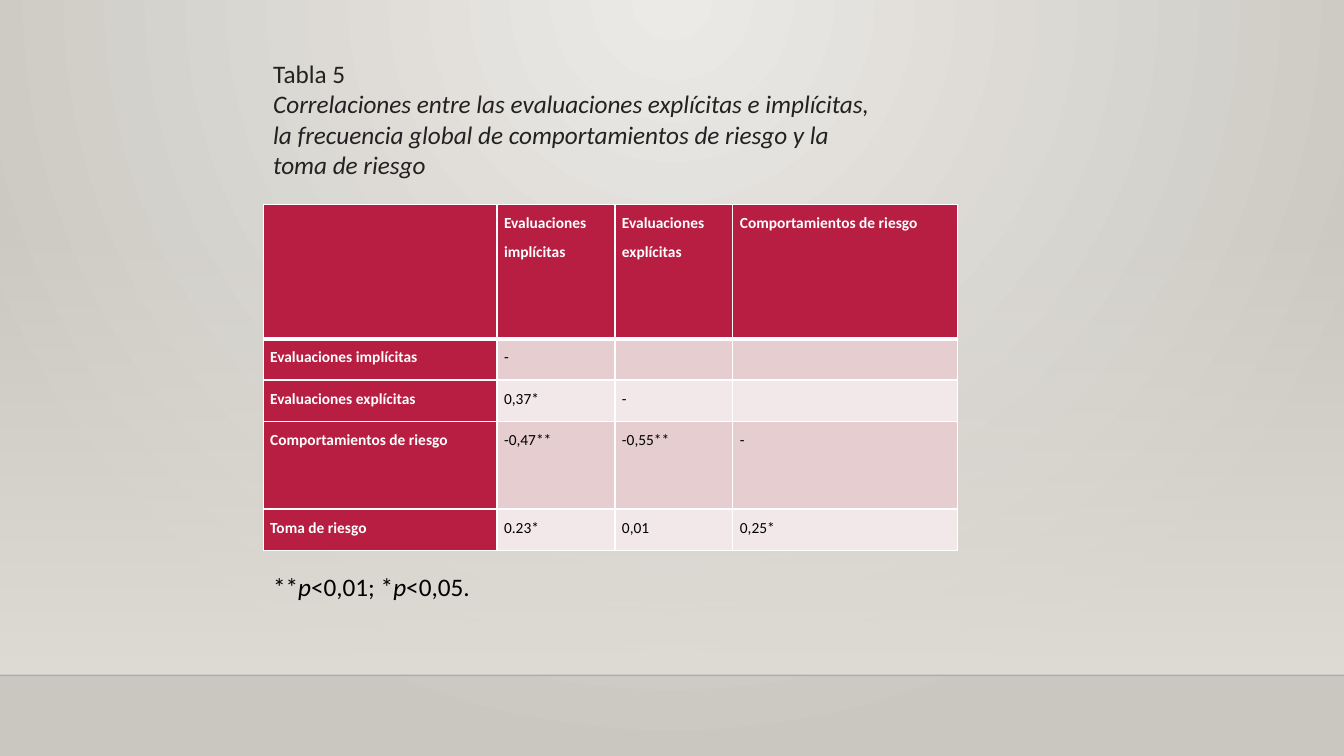
from pptx import Presentation
from pptx.dml.color import RGBColor
from pptx.enum.shapes import MSO_CONNECTOR as Conn, MSO_SHAPE as Shape
from pptx.enum.text import MSO_ANCHOR as Anchor, MSO_AUTO_SIZE as Fit, PP_ALIGN as Align
from pptx.oxml import parse_xml
from pptx.oxml.ns import nsdecls, qn
from pptx.util import Inches, Pt

WIDE, HIGH = 13.33, 7.5
LEFT = 2.61
FONT = "Calibri"
RED, WHITE, BLACK, GREY = "B71E42", "FFFFFF", "000000", "222222"
BANDS = ["E6CDCF", "F3E8E9"]
COLS = [2.32, 1.17, 1.17, 2.23]
ROWS = [1.33, 0.41, 0.41, 0.87, 0.41]
DATA = [
    ["", "Evaluaciones implícitas", "Evaluaciones explícitas", "Comportamientos de riesgo"],
    ["Evaluaciones implícitas", "-", "", ""],
    ["Evaluaciones explícitas", "0,37*", "-", ""],
    ["Comportamientos de riesgo", "-0,47**", "-0,55**", "-"],
    ["Toma de riesgo", "0.23*", "0,01", "0,25*"],
]


def rgb(code):
    return RGBColor.from_string(code)


def inches(box):
    return [Inches(v) for v in box]


def add_run(para, text, size, color, bold=False, italic=False):
    run = para.add_run()
    run.text = text
    font = run.font
    font.name, font.size = FONT, Pt(size)
    font.bold, font.italic = bold, italic
    font.color.rgb = rgb(color)


def blend(fill, first, last):
    fill.gradient()
    for stop, code in zip(fill.gradient_stops, (first, last)):
        stop.color.rgb = rgb(code)
        stop.position = 0 if code == first and stop.position == 0 else 1


def fade(color, percent):
    color.append(parse_xml(f'<a:alpha {nsdecls("a")} val="{percent * 1000}"/>'))


# Backdrop: round glow, soft wall and floor line
def add_stage(slide, box):
    left, top, width, height = box
    blend(slide.background.fill, "ECEAE7", "CAC7C1")
    glow = next(slide.element.iter(qn("a:gradFill")))
    for line in glow.findall(qn("a:lin")):
        glow.remove(line)
    glow.append(parse_xml(
        f'<a:path {nsdecls("a")} path="circle">'
        '<a:fillToRect l="43000" t="0" r="43000" b="100000"/></a:path>'))

    floor = top + height
    wall = slide.shapes.add_shape(Shape.RECTANGLE, *inches(box))
    wall.shadow.inherit = False
    wall.line.fill.background()
    blend(wall.fill, "DFDBD5", "DFDBD5")
    wall.fill.gradient_angle = 270
    fade(next(wall.element.iter(qn("a:srgbClr"))), 0)

    edge = slide.shapes.add_connector(
        Conn.STRAIGHT, *inches([left, floor, left + width, floor]))
    edge.line.width = Pt(1)
    edge.line.color.rgb = rgb("000001")
    fade(next(edge.element.iter(qn("a:srgbClr"))), 20)
    edge.element.spPr.append(parse_xml(f'<a:effectLst {nsdecls("a")}/>'))


# Table number and caption
def add_title(slide, box):
    title = slide.shapes.title
    title.left, title.top, title.width, title.height = inches(box)
    frame = title.text_frame
    frame.word_wrap, frame.auto_size = True, Fit.NONE
    frame.vertical_anchor = Anchor.TOP
    head, body = frame.paragraphs[0], frame.add_paragraph()
    head.alignment = body.alignment = Align.LEFT
    add_run(head, "Tabla 5", 18, GREY)
    add_run(body, "Correlaciones entre las evaluaciones explícitas e implícitas, "
            "la frecuencia global de comportamientos de riesgo y la toma de riesgo",
            18, GREY, italic=True)


def set_edges(cell, row):
    props = cell._tc.get_or_add_tcPr()
    thick = {("B", 0): 3, ("T", 1): 3}
    for side in "LRTB":
        width = Pt(thick.get((side, row), 1))
        props.append(parse_xml(
            f'<a:ln{side} {nsdecls("a")} w="{width}"><a:solidFill>'
            f'<a:srgbClr val="{WHITE}"/></a:solidFill></a:ln{side}>'))


# Correlation table
def add_grid(slide, box):
    grid = slide.shapes.add_table(len(ROWS), len(COLS), *inches(box)).table
    for col, width in zip(grid.columns, COLS):
        col.width = Inches(width)
    for r, height in enumerate(ROWS):
        grid.rows[r].height = Inches(height)
        for c, text in enumerate(DATA[r]):
            cell = grid.cell(r, c)
            label = r == 0 or c == 0
            set_edges(cell, r)
            cell.fill.solid()
            cell.fill.fore_color.rgb = rgb(RED if label else BANDS[(r - 1) % 2])
            cell.margin_left = cell.margin_right = Inches(0.07)
            cell.margin_top = cell.margin_bottom = 0
            if text:
                para = cell.text_frame.paragraphs[0]
                para.line_spacing = 1.5
                add_run(para, text, 11, WHITE if label else BLACK, bold=label)


# Significance note
def add_note(slide, box):
    frame = slide.shapes.add_textbox(*inches(box)).text_frame
    frame.word_wrap = True
    para = frame.paragraphs[0]
    for text in ["**", "p", "<0,01; *", "p", "<0,05."]:
        add_run(para, text, 18, BLACK, italic=text == "p")


def main():
    deck = Presentation()
    deck.slide_width, deck.slide_height = Inches(WIDE), Inches(HIGH)
    slide = deck.slides.add_slide(deck.slide_layouts[5])
    add_stage(slide, [0, 2.21, WIDE, 4.49])
    add_title(slide, [LEFT, 0.53, 6.14, 1.5])
    add_grid(slide, [LEFT, 2.03, sum(COLS), sum(ROWS)])
    add_note(slide, [LEFT, 5.62, 2.27, 0.4])
    deck.save("out.pptx")


if __name__ == "__main__":
    main()
